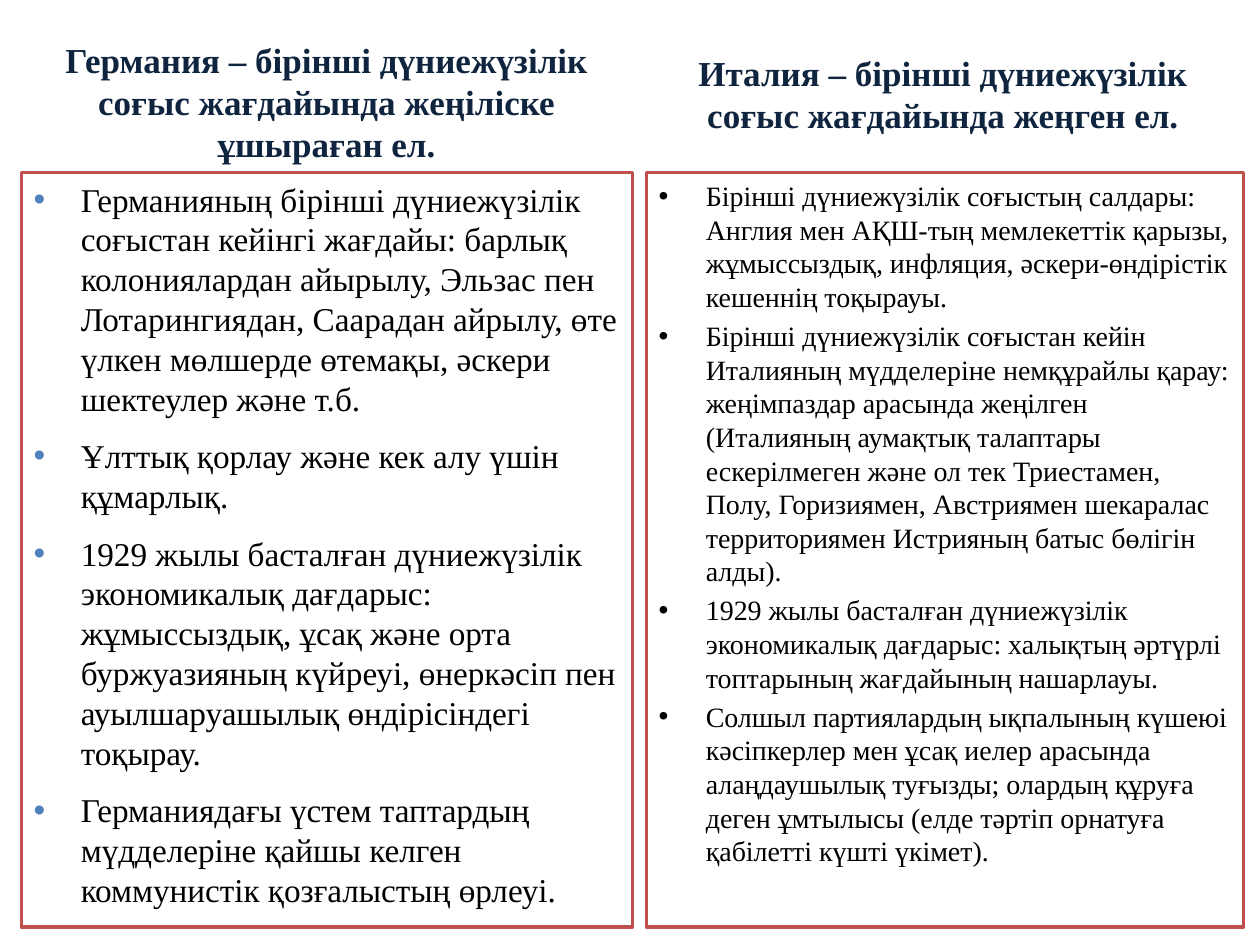
from dataclasses import dataclass

from lxml.etree import SubElement
from pptx import Presentation
from pptx.dml.color import RGBColor
from pptx.enum.shapes import MSO_SHAPE
from pptx.enum.text import MSO_ANCHOR, PP_ALIGN
from pptx.oxml.ns import qn
from pptx.util import Cm, Pt


@dataclass(frozen=True)
class Theme:
    font: str = "Times New Roman"
    heading: str = "0F243E"
    body: str = "000000"
    accent: str = "4F81BD"
    border: str = "C0504D"
    panel: str = "FFFFFF"
    heading_size: float = 20
    germany_size: float = 19
    italy_size: float = 16


theme = Theme()


def add_text(paragraph, text, size, color, bold=False):
    run = paragraph.add_run()
    run.text = text
    run.font.name = theme.font
    run.font.size = Pt(size)
    run.font.bold = bold
    run.font.color.rgb = RGBColor.from_string(color)


def add_bullet(paragraph, color):
    properties = paragraph._p.get_or_add_pPr()
    properties.set("marL", str(Cm(0.95)))
    properties.set("indent", str(-Cm(0.95)))
    bullet_color = SubElement(properties, qn("a:buClr"))
    SubElement(bullet_color, qn("a:srgbClr"), val=color)
    SubElement(properties, qn("a:buFont"), typeface="Arial")
    SubElement(properties, qn("a:buChar"), char="•")


presentation = Presentation()
presentation.slide_width = Cm(25.4)
presentation.slide_height = Cm(19.05)
slide = presentation.slides.add_slide(presentation.slide_layouts[6])

# Headings: left, top, width, height, text
headings = [
    (0.25, 0.66, 12.67, 2.82,
     "Германия – бірінші дүниежүзілік соғыс жағдайында жеңіліске ұшыраған ел."),
    (12.9, 0.92, 12.22, 2.51,
     "Италия – бірінші дүниежүзілік соғыс жағдайында жеңген ел."),
]

# Panels: left, width, text size, bullet colour, space before, points
panels = [
    (0.43, 12.32, theme.germany_size, theme.accent, 10, [
        "Германияның бірінші дүниежүзілік соғыстан кейінгі жағдайы: барлық "
        "колониялардан айырылу, Эльзас пен Лотарингиядан, Саарадан айрылу, өте "
        "үлкен мөлшерде өтемақы, әскери шектеулер және т.б.",
        "Ұлттық қорлау және кек алу үшін құмарлық.",
        "1929 жылы басталған дүниежүзілік экономикалық дағдарыс: жұмыссыздық, "
        "ұсақ және орта буржуазияның күйреуі, өнеркәсіп пен ауылшаруашылық "
        "өндірісіндегі тоқырау.",
        "Германиядағы үстем таптардың мүдделеріне қайшы келген коммунистік "
        "қозғалыстың өрлеуі.",
    ]),
    (13.03, 12.04, theme.italy_size, theme.body, 3.2, [
        "Бірінші дүниежүзілік соғыстың салдары: Англия мен АҚШ-тың мемлекеттік "
        "қарызы, жұмыссыздық, инфляция, әскери-өндірістік кешеннің тоқырауы.",
        "Бірінші дүниежүзілік соғыстан кейін Италияның мүдделеріне немқұрайлы "
        "қарау: жеңімпаздар арасында жеңілген (Италияның аумақтық талаптары "
        "ескерілмеген және ол тек Триестамен, Полу, Горизиямен, Австриямен "
        "шекаралас территориямен Истрияның батыс бөлігін алды).",
        "1929 жылы басталған дүниежүзілік экономикалық дағдарыс: халықтың "
        "әртүрлі топтарының жағдайының нашарлауы.",
        "Солшыл партиялардың ықпалының күшеюі кәсіпкерлер мен ұсақ иелер "
        "арасында алаңдаушылық туғызды; олардың құруға деген ұмтылысы (елде "
        "тәртіп орнатуға қабілетті күшті үкімет).",
    ]),
]

# Bordered panels with bulleted points
for left, width, size, bullet_color, gap, points in panels:
    panel = slide.shapes.add_shape(
        MSO_SHAPE.RECTANGLE, Cm(left), Cm(3.48), Cm(width), Cm(15.21))
    panel.shadow.inherit = False
    panel.fill.solid()
    panel.fill.fore_color.rgb = RGBColor.from_string(theme.panel)
    panel.line.color.rgb = RGBColor.from_string(theme.border)
    panel.line.width = Pt(2)
    frame = panel.text_frame
    frame.word_wrap = True
    frame.vertical_anchor = MSO_ANCHOR.TOP
    for index, point in enumerate(points):
        paragraph = frame.add_paragraph() if index else frame.paragraphs[0]
        add_bullet(paragraph, bullet_color)
        paragraph.alignment = PP_ALIGN.LEFT
        paragraph.space_before = Pt(gap if index else 0)
        add_text(paragraph, point, size, theme.body)

# Country headings above the panels
for left, top, width, height, text in headings:
    heading = slide.shapes.add_textbox(Cm(left), Cm(top), Cm(width), Cm(height))
    frame = heading.text_frame
    frame.word_wrap = True
    paragraph = frame.paragraphs[0]
    paragraph.alignment = PP_ALIGN.CENTER
    add_text(paragraph, text, theme.heading_size, theme.heading, bold=True)

presentation.save("out.pptx")
